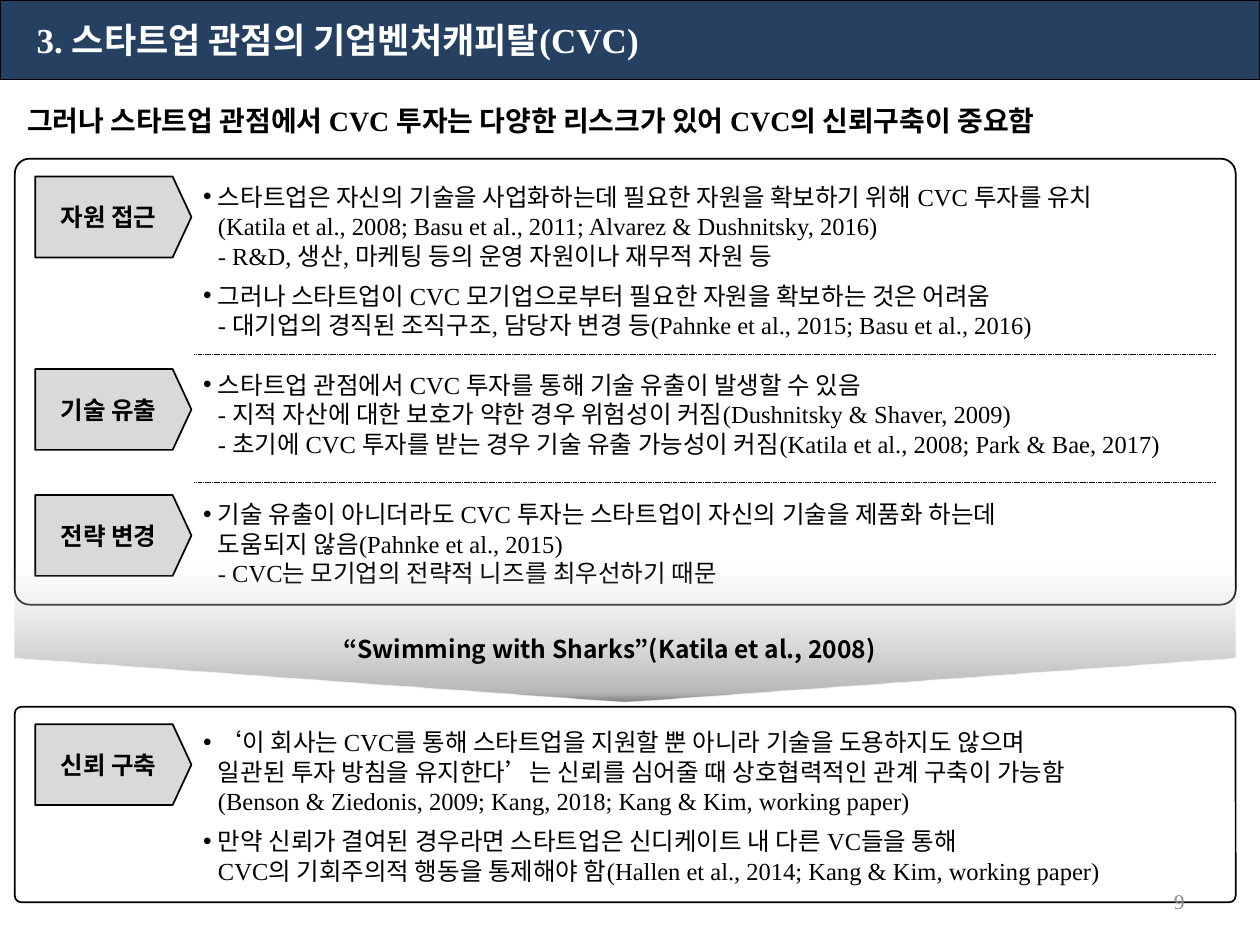
import lxml.etree
import pptx
import pptx.dml.color
import pptx.enum.dml
import pptx.enum.shapes
import pptx.enum.text
import pptx.oxml
import pptx.oxml.ns
import pptx.util
from pptx.util import Cm, Pt

SERIF = "Times New Roman"
SANS = "Noto Sans CJK KR"
SHAPES = pptx.enum.shapes.MSO_SHAPE
ALIGN = pptx.enum.text.PP_ALIGN
MIDDLE = pptx.enum.text.MSO_ANCHOR.MIDDLE
TOP = pptx.enum.text.MSO_ANCHOR.TOP


def color(hex_code):
    return pptx.dml.color.RGBColor.from_string(hex_code)


def write(paragraph, lines, size, font=SERIF, bold=False, ink="000000", align=ALIGN.LEFT):
    paragraph.alignment = align
    paragraph.space_before = Pt(0)
    for index, line in enumerate(lines):
        if index:
            paragraph.add_line_break()
        run = paragraph.add_run()
        run.text = line
        run.font.name = font
        run.font.size = Pt(size)
        run.font.bold = bold
        run.font.color.rgb = color(ink)
        east_asian = lxml.etree.SubElement(run.font._element, pptx.oxml.ns.qn("a:ea"))
        east_asian.set("typeface", SANS)


sections = [
    ("자원 접근", 3.56, 3.53, 3.45, [
        ["스타트업은 자신의 기술을 사업화하는데 필요한 자원을 확보하기 위해 CVC 투자를 유치",
         "(Katila et al., 2008; Basu et al., 2011; Alvarez & Dushnitsky, 2016)",
         "- R&D, 생산, 마케팅 등의 운영 자원이나 재무적 자원 등"],
        ["그러나 스타트업이 CVC 모기업으로부터 필요한 자원을 확보하는 것은 어려움",
         "- 대기업의 경직된 조직구조, 담당자 변경 등(Pahnke et al., 2015; Basu et al., 2016)"]]),
    ("기술 유출", 7.44, 7.32, 2.06, [
        ["스타트업 관점에서 CVC 투자를 통해 기술 유출이 발생할 수 있음",
         "- 지적 자산에 대한 보호가 약한 경우 위험성이 커짐(Dushnitsky & Shaver, 2009)",
         "- 초기에 CVC 투자를 받는 경우 기술 유출 가능성이 커짐(Katila et al., 2008; Park & Bae, 2017)"]]),
    ("전략 변경", 9.98, 9.93, 2.06, [
        ["기술 유출이 아니더라도 CVC 투자는 스타트업이 자신의 기술을 제품화 하는데",
         "도움되지 않음(Pahnke et al., 2015)",
         "- CVC는 모기업의 전략적 니즈를 최우선하기 때문"]]),
    ("신뢰 구축", 14.6, 14.53, 3.45, [
        ["‘이 회사는 CVC를 통해 스타트업을 지원할 뿐 아니라 기술을 도용하지도 않으며",
         "일관된 투자 방침을 유지한다’는 신뢰를 심어줄 때 상호협력적인 관계 구축이 가능함",
         "(Benson & Ziedonis, 2009; Kang, 2018; Kang & Kim, working paper)"],
        ["만약 신뢰가 결여된 경우라면 스타트업은 신디케이트 내 다른 VC들을 통해",
         "CVC의 기회주의적 행동을 통제해야 함(Hallen et al., 2014; Kang & Kim, working paper)"]]),
]

deck = pptx.Presentation()
deck.slide_width, deck.slide_height = Cm(25.4), Cm(19.05)
slide = deck.slides.add_slide(deck.slide_layouts.get_by_name("Comparison"))

heading = slide.shapes.title
heading.left, heading.top, heading.width, heading.height = Cm(0), Cm(0), Cm(25.4), Cm(1.6)
heading.fill.solid()
heading.fill.fore_color.rgb = color("254061")
heading.line.color.rgb = color("000000")
heading.line.width = Pt(0.75)
heading.text_frame.vertical_anchor = MIDDLE
heading.text_frame.auto_size = pptx.enum.text.MSO_AUTO_SIZE.NONE
heading.text_frame.margin_left = Cm(0.74)
write(heading.text_frame.paragraphs[0], ["3. 스타트업 관점의 기업벤처캐피탈(CVC)"], 20, bold=True, ink="FFFFFF")

for number, (name, label_top, list_top, list_height, points) in enumerate(sections, 1):
    findings = slide.placeholders[number]
    findings.left, findings.top = Cm(3.84), Cm(list_top)
    findings.width, findings.height = Cm(20.65), Cm(list_height)
    frame = findings.text_frame
    frame.vertical_anchor = TOP
    frame.auto_size = pptx.enum.text.MSO_AUTO_SIZE.NONE
    for index, lines in enumerate(points):
        point = frame.add_paragraph() if index else frame.paragraphs[0]
        write(point, lines, 14)
        point.line_spacing = Pt(16.9)
        point.space_after = Pt(6)
        properties = point._p.get_or_add_pPr()
        properties.set("marL", str(Cm(0.3)))
        properties.set("indent", str(-Cm(0.3)))
        bullet = lxml.etree.SubElement(properties, pptx.oxml.ns.qn("a:buChar"))
        bullet.set("char", "•")

    label = slide.shapes.add_shape(SHAPES.PENTAGON, Cm(0.71), Cm(label_top), Cm(3.15), Cm(1.63))
    label.adjustments[0] = 0.232
    label.shadow.inherit = False
    label.fill.solid()
    label.fill.fore_color.rgb = color("D9D9D9")
    label.line.color.rgb = color("000000")
    label.line.width = Pt(1)
    label.text_frame.vertical_anchor = MIDDLE
    write(label.text_frame.paragraphs[0], [name], 14, SANS, True, align=ALIGN.CENTER)

for panel_top, panel_height in [(3.2, 8.99), (14.25, 3.94)]:
    panel = slide.shapes.add_shape(SHAPES.ROUNDED_RECTANGLE, Cm(0.3), Cm(panel_top), Cm(24.61), Cm(panel_height))
    panel.adjustments[0] = 0.033
    panel.shadow.inherit = False
    panel.fill.background()
    panel.line.color.rgb = color("000000")
    panel.line.width = Pt(1)

arrow = slide.shapes.add_shape(SHAPES.PENTAGON, Cm(11.23), Cm(0.46), Cm(2.74), Cm(24.61))
arrow.rotation = 90
arrow.adjustments[0] = 0.324
arrow.shadow.inherit = False
arrow.line.fill.background()
gradient = pptx.oxml.parse_xml(
    f'<a:gradFill {pptx.oxml.ns.nsdecls("a")} rotWithShape="1"><a:gsLst>'
    '<a:gs pos="0"><a:srgbClr val="808080"/></a:gs>'
    '<a:gs pos="7000"><a:srgbClr val="B7B7B7"/></a:gs>'
    '<a:gs pos="100000"><a:srgbClr val="D9D9D9"><a:alpha val="0"/></a:srgbClr></a:gs>'
    '</a:gsLst><a:lin ang="10800000" scaled="0"/></a:gradFill>')
arrow._element.spPr.find(pptx.oxml.ns.qn("a:prstGeom")).addnext(gradient)

for left, top, width, height, anchor, words, style in [
    (0.3, 1.96, 24.79, 0.94, TOP,
     "그러나 스타트업 관점에서 CVC 투자는 다양한 리스크가 있어 CVC의 신뢰구축이 중요함",
     dict(size=16, bold=True)),
    (4.7, 12.19, 15.19, 1.78, MIDDLE, "“Swimming with Sharks”(Katila et al., 2008)",
     dict(size=14, font=SANS, bold=True, align=ALIGN.CENTER)),
    (18.21, 17.65, 5.92, 1.02, MIDDLE, "9", dict(size=12, ink="8C8C8C", align=ALIGN.RIGHT)),
]:
    caption = slide.shapes.add_textbox(Cm(left), Cm(top), Cm(width), Cm(height)).text_frame
    caption.word_wrap = True
    caption.vertical_anchor = anchor
    write(caption.paragraphs[0], [words], **style)

for divider_top in (7.14, 9.73):
    divider = slide.shapes.add_connector(
        pptx.enum.shapes.MSO_CONNECTOR.STRAIGHT, Cm(3.91), Cm(divider_top), Cm(24.51), Cm(divider_top))
    divider.line.color.rgb = color("000000")
    divider.line.width = Pt(0.25)
    divider.line.dash_style = pptx.enum.dml.MSO_LINE.SQUARE_DOT
    lxml.etree.SubElement(divider._element.spPr, pptx.oxml.ns.qn("a:effectLst"))

deck.save("out.pptx")
